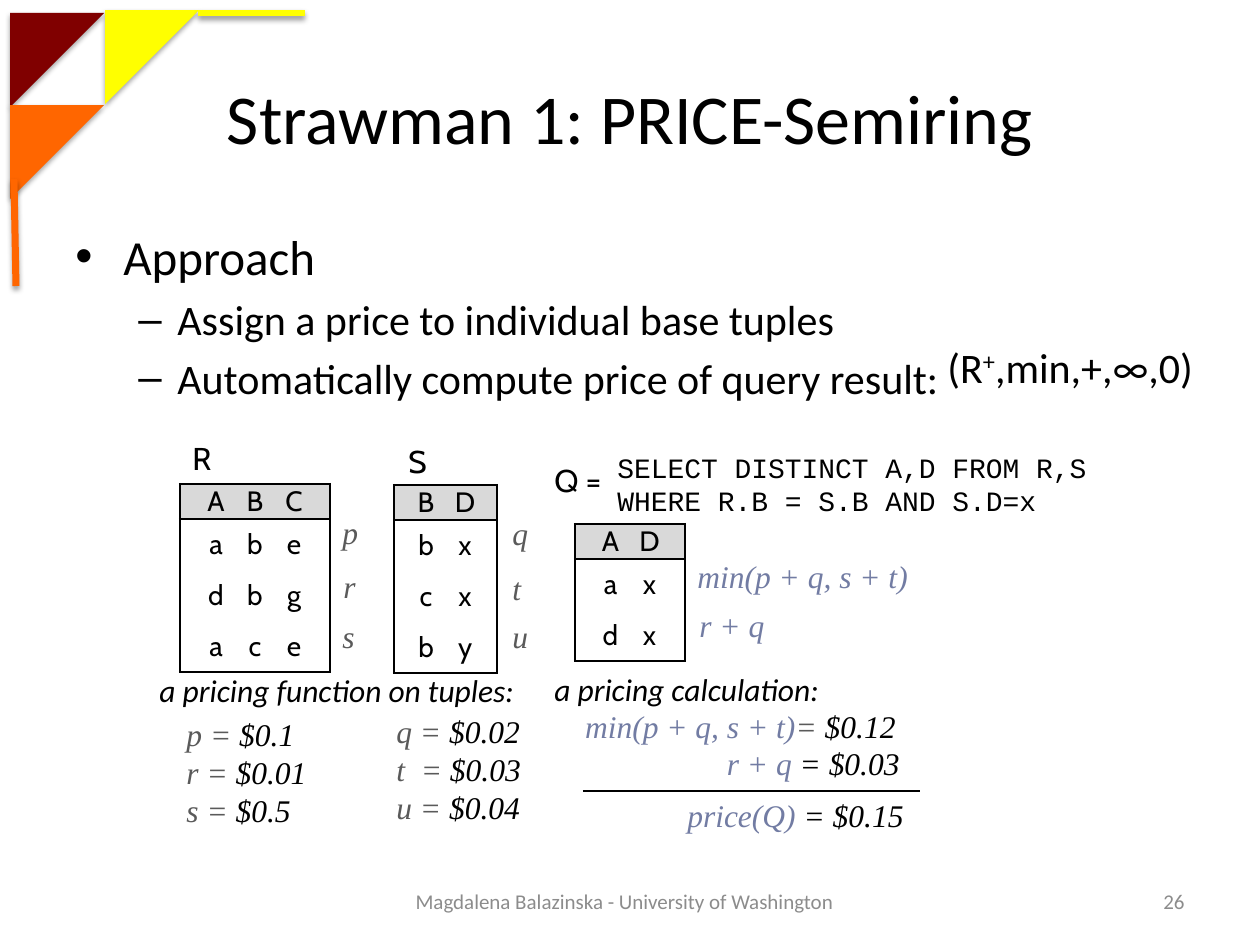
from lxml import etree
from pptx import Presentation
from pptx.dml.color import RGBColor
from pptx.enum.shapes import MSO_CONNECTOR, MSO_SHAPE
from pptx.enum.text import MSO_ANCHOR, PP_ALIGN
from pptx.oxml.ns import qn
from pptx.util import Pt

LEFT, CENTER, RIGHT = PP_ALIGN.LEFT, PP_ALIGN.CENTER, PP_ALIGN.RIGHT
TOP, MIDDLE = MSO_ANCHOR.TOP, MSO_ANCHOR.MIDDLE
TRIANGLE, STRAIGHT = MSO_SHAPE.RIGHT_TRIANGLE, MSO_CONNECTOR.STRAIGHT

BLACK = RGBColor(0x00, 0x00, 0x00)
GRAY = RGBColor(0x5A, 0x5A, 0x5A)
FOOTER_GRAY = RGBColor(0x8C, 0x8C, 0x8C)
HEADER_GRAY = RGBColor(0xD9, 0xD9, 0xD9)
BLUE = RGBColor(0x72, 0x7C, 0xA3)
MAROON = RGBColor(0x80, 0x00, 0x00)
ORANGE = RGBColor(0xFF, 0x66, 0x00)
YELLOW = RGBColor(0xFF, 0xFF, 0x00)

SANS, TABLE_FONT, MATH, CODE = "Calibri", "Cabin", "Times New Roman", "Courier New"

TRIANGLES = [(10, 13, MAROON), (10, 105, ORANGE), (105, 10, YELLOW)]
TRIANGLE_SIZE = 94
ACCENT_LINES = [(14, 179, 16, 286, ORANGE), (198, 13, 305, 13, YELLOW)]
SUM_LINE = (583, 791, 920, 791)

TITLE = "Strawman 1: PRICE-Semiring"
BULLETS = [
    ("Approach", 0),
    ("Assign a price to individual base tuples", 1),
    ("Automatically compute price of query result:", 1),
]
BULLET_STYLES = [("•", 28, 48, -48), ("–", 24, 102, -39)]

TABLES = [
    (180, 484, 150, ["ABC", "abe", "dbg", "ace"]),
    (394, 485, 103, ["BD", "bx", "cx", "by"]),
    (575, 524, 110, ["AD", "ax", "dx"]),
]
HEADER_HEIGHT, ROW_HEIGHT, COLUMN_PITCH = 35, 51, 39

TABLE_NAMES = [("R", 180, 433, 48), ("S", 396, 436, 47), ("Q =", 542, 455, 77)]
ANNOTATIONS = [
    ("p", 330, 507, 42, GRAY),
    ("r", 331, 561, 38, GRAY),
    ("s", 330, 611, 38, GRAY),
    ("q", 500, 508, 42, GRAY),
    ("t", 500, 563, 34, GRAY),
    ("u", 500, 611, 42, GRAY),
    ("min(p + q, s + t)", 685, 551, 248, BLUE),
    ("r + q", 687, 600, 91, BLUE),
]
CAPTIONS = [
    ("a pricing function on tuples:", 147, 665, 384),
    ("a pricing calculation:", 542, 664, 300),
]
PRICES = [
    (174, 709, 145, [("p = ", "$0.1"), ("r = ", "$0.01"), ("s = ", "$0.5")]),
    (384, 706, 150, [("q = ", "$0.02"), ("t  = ", "$0.03"), ("u = ", "$0.04")]),
]
CALCULATION_LEFT = 553
CALCULATIONS = [
    (701, 908, [("min(p + q, s + t)", BLUE), ("= ", GRAY), ("$0.12", BLACK)]),
    (738, 912, [("r + q ", BLUE), ("= $0.03", BLACK)]),
    (790, 916, [("price(Q) ", BLUE), ("= $0.15", BLACK)]),
]
QUERY = ["SELECT DISTINCT A,D FROM R,S", "WHERE R.B = S.B AND S.D=x"]
SEMIRING = ["(R", "+", ",min,+,∞,0)"]
FOOTERS = [
    ("26", 903, 294, RIGHT),
    ("Magdalena Balazinska - University of Washington", 388, 473, CENTER),
]


def px(length):
    return round(length * 914400 / 126)


def add_runs(paragraph, runs, font, size, italic=False):
    for text, color in runs:
        run = paragraph.add_run()
        run.text = text
        run.font.name = font
        run.font.size = Pt(size)
        run.font.italic = italic
        run.font.color.rgb = color


def add_text(slide, box, lines, font, size, italic=False, align=LEFT, anchor=TOP, wrap=False):
    frame = slide.shapes.add_textbox(*map(px, box)).text_frame
    frame.word_wrap = wrap
    frame.vertical_anchor = anchor
    for index, runs in enumerate(lines):
        paragraph = frame.paragraphs[0] if index == 0 else frame.add_paragraph()
        paragraph.alignment = align
        add_runs(paragraph, runs, font, size, italic)
    return frame


def set_effects(shape, opacity=0):
    properties = shape._element.spPr
    effects = etree.SubElement(properties, qn("a:effectLst"))
    if opacity:
        shadow = etree.SubElement(effects, qn("a:outerShdw"), blurRad=str(Pt(3.1)),
                                  dist=str(Pt(1.8)), dir="5400000", rotWithShape="0")
        color = etree.SubElement(shadow, qn("a:srgbClr"), val="000000")
        etree.SubElement(color, qn("a:alpha"), val=str(opacity * 1000))


def add_line(slide, ends, color, width, opacity=0):
    line = slide.shapes.add_connector(STRAIGHT, *map(px, ends))
    line.line.color.rgb = color
    line.line.width = Pt(width)
    set_effects(line, opacity)


def set_borders(cell, visible):
    properties = cell._tc.get_or_add_tcPr()
    for side, shown in zip("LRTB", visible):
        border = etree.SubElement(properties, qn(f"a:ln{side}"), w=str(Pt(1.5)))
        if shown:
            fill = etree.SubElement(border, qn("a:solidFill"))
            etree.SubElement(fill, qn("a:srgbClr"), val=str(BLACK))
        else:
            etree.SubElement(border, qn("a:noFill"))


def add_relation(slide, left, top, width, rows):
    count = len(rows[0])
    padding = (width - count * COLUMN_PITCH) / 2
    height = HEADER_HEIGHT + ROW_HEIGHT * (len(rows) - 1)
    box = map(px, (left, top, width, height))
    table = slide.shapes.add_table(len(rows), count, *box).table
    table.first_row = table.horz_banding = False
    for c, column in enumerate(table.columns):
        first, last = c == 0, c == count - 1
        column.width = px(COLUMN_PITCH + padding * (first + last))
        for r, row in enumerate(rows):
            table.rows[r].height = px(ROW_HEIGHT if r else HEADER_HEIGHT)
            cell = table.cell(r, c)
            cell.margin_top = cell.margin_bottom = 0
            cell.margin_left = px(padding * first)
            cell.margin_right = px(padding * last)
            cell.vertical_anchor = MIDDLE
            set_borders(cell, (first, last, r <= 1, r in (0, len(rows) - 1)))
            if r:
                cell.fill.background()
            else:
                cell.fill.solid()
                cell.fill.fore_color.rgb = HEADER_GRAY
            paragraph = cell.text_frame.paragraphs[0]
            paragraph.alignment = CENTER
            add_runs(paragraph, [(row[c], BLACK)], TABLE_FONT, 16)


def add_bullets(slide):
    frame = slide.shapes.add_textbox(*map(px, (63, 220, 1166, 179))).text_frame
    frame.word_wrap = True
    for index, (text, level) in enumerate(BULLETS):
        mark, size, margin, indent = BULLET_STYLES[level]
        paragraph = frame.add_paragraph() if index else frame.paragraphs[0]
        paragraph.level = level
        paragraph.space_before = Pt(4.8)
        properties = paragraph._p.get_or_add_pPr()
        properties.set("marL", str(px(margin)))
        properties.set("indent", str(px(indent)))
        etree.SubElement(properties, qn("a:buFont"), typeface="Arial")
        etree.SubElement(properties, qn("a:buChar"), char=mark)
        add_runs(paragraph, [(text, BLACK)], SANS, size)


def main():
    presentation = Presentation()
    presentation.slide_width, presentation.slide_height = px(1260), px(945)
    slide = presentation.slides.add_slide(presentation.slide_layouts[6])

    for left, top, color in TRIANGLES:
        box = map(px, (left, top, TRIANGLE_SIZE, TRIANGLE_SIZE))
        triangle = slide.shapes.add_shape(TRIANGLE, *box)
        triangle.rotation = 90
        triangle.fill.solid()
        triangle.fill.fore_color.rgb = color
        triangle.line.fill.background()
        set_effects(triangle, 35)
    for *ends, color in ACCENT_LINES:
        add_line(slide, ends, color, 4, 38)

    add_text(slide, (63, 38, 1134, 158), [[(TITLE, BLACK)]], SANS, 40,
             align=CENTER, anchor=MIDDLE, wrap=True)
    add_bullets(slide)
    for relation in TABLES:
        add_relation(slide, *relation)
    for text, left, top, width in TABLE_NAMES:
        add_text(slide, (left, top, width, 50), [[(text, BLACK)]], TABLE_FONT, 18)
    for text, left, top, width, color in ANNOTATIONS:
        add_text(slide, (left, top, width, 50), [[(text, color)]], MATH, 18, italic=True)
    add_text(slide, (605, 444, 504, 81), [[(line, BLACK)] for line in QUERY], CODE, 16, wrap=True)
    for text, left, top, width in CAPTIONS:
        add_text(slide, (left, top, width, 50), [[(text, BLACK)]], SANS, 18, italic=True)
    for left, top, width, prices in PRICES:
        lines = [[(name, GRAY), (price, BLACK)] for name, price in prices]
        add_text(slide, (left, top, width, 126), lines, MATH, 18, italic=True)
    for top, right, runs in CALCULATIONS:
        box = (CALCULATION_LEFT, top, right - CALCULATION_LEFT, 50)
        add_text(slide, box, [runs], MATH, 18, italic=True, align=RIGHT, wrap=True)
    add_line(slide, SUM_LINE, BLACK, 0.75)
    for text, left, width, align in FOOTERS:
        add_text(slide, (left, 876, width, 50), [[(text, FOOTER_GRAY)]], SANS, 12,
                 align=align, anchor=MIDDLE, wrap=True)
    semiring = add_text(slide, (935, 335, 285, 63), [[(part, BLACK) for part in SEMIRING]], SANS, 24)
    semiring.paragraphs[0].runs[1]._r.get_or_add_rPr().set("baseline", "30000")
    presentation.save("out.pptx")


if __name__ == "__main__":
    main()
